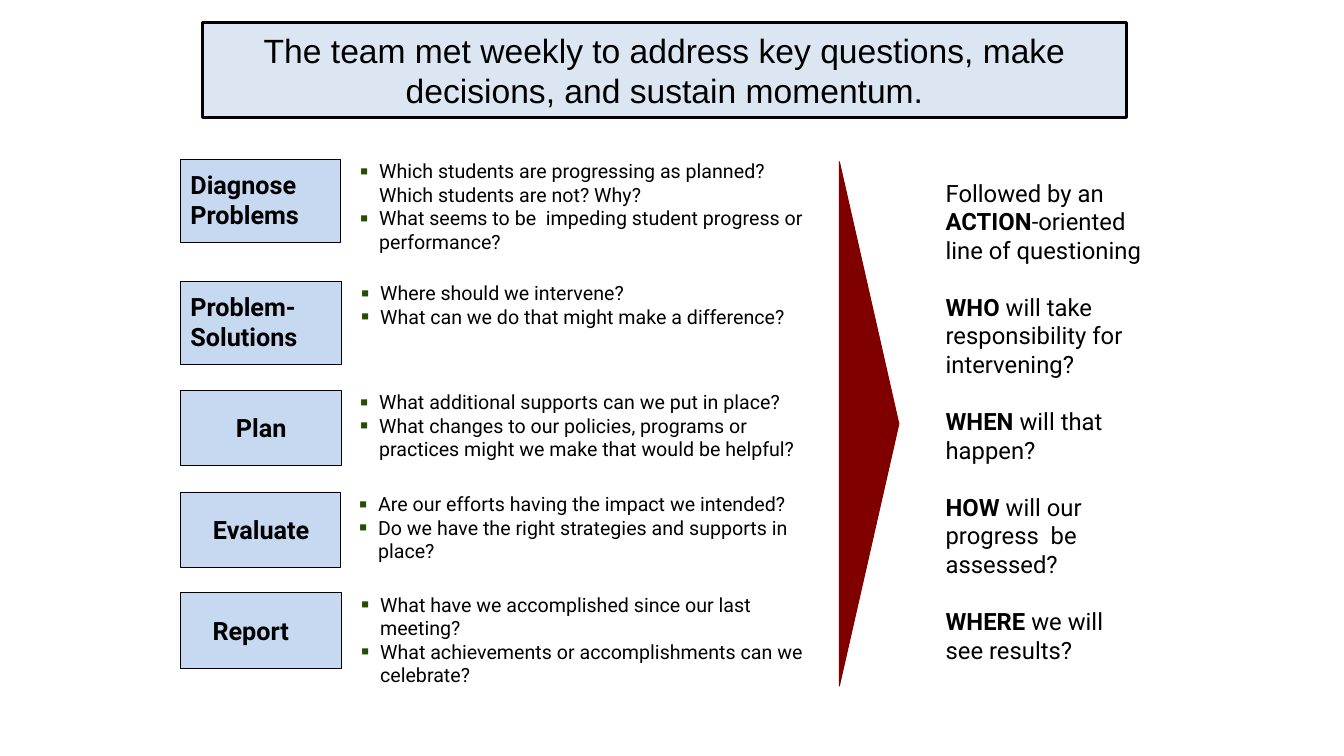
from lxml import etree
from pptx import Presentation
from pptx.dml.color import RGBColor
from pptx.enum import shapes, text
from pptx.oxml import ns
from pptx.util import Inches, Pt

BLACK = RGBColor(0x00, 0x00, 0x00)
TITLE_FILL = RGBColor(0xDC, 0xE6, 0xF2)
STEP_FILL = RGBColor(0xC6, 0xD9, 0xF1)
ARROW_FILL = RGBColor(0x80, 0x00, 0x00)
BULLET_GREEN = RGBColor(0x22, 0x50, 0x00)
LEFT, CENTER = text.PP_ALIGN.LEFT, text.PP_ALIGN.CENTER
RECTANGLE = shapes.MSO_SHAPE.RECTANGLE
TRIANGLE = shapes.MSO_SHAPE.ISOSCELES_TRIANGLE

STEP_LEFT = 1.79

# Each step: top, box size, label lines, label plate (left, width, alignment), list left, width, height, questions
STEPS = [
    (1.58, (1.59, 0.82), ["Diagnose Problems"], None, (3.57, 4.42, 0.96),
     ["Which students are progressing as planned? Which students are not? Why?",
      "What seems to be  impeding student progress or performance?"]),
    (2.79, (1.6, 0.82), ["Problem-", "Solutions"], None, (3.58, 4.42, 0.48),
     ["Where should we intervene?",
      "What can we do that might make a difference?"]),
    (3.87, (1.6, 0.75), ["Plan"], (1.88, 1.42, CENTER), (3.57, 4.4, 0.72),
     ["What additional supports can we put in place?",
      "What changes to our policies, programs or practices might we make that would be helpful?"]),
    (4.88, (1.59, 0.75), ["Evaluate"], (1.88, 1.42, CENTER), (3.56, 4.4, 0.72),
     ["Are our efforts having the impact we intended?",
      "Do we have the right strategies and supports in place?"]),
    (5.88, (1.6, 0.75), ["Report"], (2.01, 1.17, LEFT), (3.58, 4.42, 0.96),
     ["What have we accomplished since our last meeting?",
      "What achievements or accomplishments can we celebrate?"]),
]

# Each paragraph: whether a gap precedes it, then (text, bold) runs
ACTIONS = [
    (False, [("Followed by an ", False), ("ACTION", True), ("-oriented line of questioning", False)]),
    (True, [("WHO", True), (" will take responsibility for intervening?", False)]),
    (True, [("WHEN ", True), ("will that happen?", False)]),
    (True, [("HOW", True), (" will our", False)]),
    (False, [("progress  be assessed?", False)]),
    (True, [("WHERE", True), (" we will see results?", False)]),
]


class SlideBuilder:
    font = "Roboto"

    def __init__(self, slide):
        self.slide = slide

    def style_run(self, run, size, bold=False, font=None):
        run.font.name = font or self.font
        run.font.size = Pt(size)
        run.font.bold = bold
        run.font.color.rgb = BLACK

    def frame(self, shape, side, top, anchor=text.MSO_ANCHOR.TOP):
        frame = shape.text_frame
        frame.word_wrap = True
        frame.vertical_anchor = anchor
        frame.margin_left = frame.margin_right = Inches(side)
        frame.margin_top = frame.margin_bottom = Inches(top)
        return frame

    def fill_text(self, frame, lines, size, bold=False, align=LEFT, font=None):
        frame.text = "\n".join(lines)
        for paragraph in frame.paragraphs:
            paragraph.alignment = align
            for run in paragraph.runs:
                self.style_run(run, size, bold, font)

    def title(self, box, line):
        shape = self.slide.shapes.title
        shape.left, shape.top, shape.width, shape.height = map(Inches, box)
        shape.fill.solid()
        shape.fill.fore_color.rgb = TITLE_FILL
        shape.line.color.rgb = BLACK
        shape.line.width = Pt(2.25)
        frame = self.frame(shape, 0.1, 0.05, text.MSO_ANCHOR.MIDDLE)
        frame.auto_size = text.MSO_AUTO_SIZE.NONE
        self.fill_text(frame, [line], 24, align=CENTER, font="Arial")

    def shape(self, kind, box, fill, line=None, width=0.5):
        shape = self.slide.shapes.add_shape(kind, *map(Inches, box))
        shape.shadow.inherit = False
        shape.fill.solid()
        shape.fill.fore_color.rgb = fill
        if line is None:
            shape.line.fill.background()
        else:
            shape.line.color.rgb = line
            shape.line.width = Pt(width)
        return shape

    def step(self, top, size, lines, plate):
        box = self.shape(RECTANGLE, (STEP_LEFT, top, *size), STEP_FILL, BLACK)
        if plate is None:
            self.fill_text(self.frame(box, 0.1, 0.1), lines, 18, True)
            return
        left, width, align = plate
        label = self.shape(RECTANGLE, (left, top + 0.17, width, 0.41), STEP_FILL)
        self.fill_text(self.frame(label, 0.1, 0.05), lines, 18, True, align)

    def bullets(self, box, lines):
        shape = self.slide.shapes.add_textbox(*map(Inches, box))
        frame = self.frame(shape, 0, 0)
        self.fill_text(frame, lines, 14)
        for paragraph in frame.paragraphs:
            paragraph.level = 1
            properties = paragraph._p.get_or_add_pPr()
            properties.set("marL", str(Inches(0.19)))
            properties.set("indent", str(-Inches(0.19)))
            color = etree.SubElement(properties, ns.qn("a:buClr"))
            etree.SubElement(color, ns.qn("a:srgbClr"), val=str(BULLET_GREEN))
            etree.SubElement(properties, ns.qn("a:buSzPct"), val="125000")
            etree.SubElement(properties, ns.qn("a:buFont"), typeface="Arial")
            etree.SubElement(properties, ns.qn("a:buChar"), char="▪")

    def actions(self, box, entries):
        shape = self.slide.shapes.add_textbox(*map(Inches, box))
        frame = self.frame(shape, 0.1, 0.05)
        for index, (gap, pieces) in enumerate(entries):
            paragraph = frame.add_paragraph() if index else frame.paragraphs[0]
            paragraph.space_before = Pt(20.4 if gap else 0)
            for words, bold in pieces:
                run = paragraph.add_run()
                run.text = words
                self.style_run(run, 17, bold)


def main():
    presentation = Presentation()
    presentation.slide_width = Inches(13.33)
    presentation.slide_height = Inches(7.5)
    builder = SlideBuilder(presentation.slides.add_slide(presentation.slide_layouts[5]))

    # Title
    builder.title((2.01, 0.22, 9.16, 0.95),
                  "The team met weekly to address key questions, make decisions, and sustain momentum.")

    # Steps with their questions
    for top, size, lines, plate, (left, width, height), questions in STEPS:
        builder.step(top, size, lines, plate)
        builder.bullets((left, top, width, height), questions)

    # Arrow towards the actions
    arrow = builder.shape(TRIANGLE, (6.02, 3.91, 5.2, 0.59), ARROW_FILL, ARROW_FILL, 0.75)
    arrow.rotation = 90

    # Action questions
    builder.actions((9.28, 1.72, 2.19, 5.06), ACTIONS)

    presentation.save("out.pptx")


if __name__ == "__main__":
    main()
